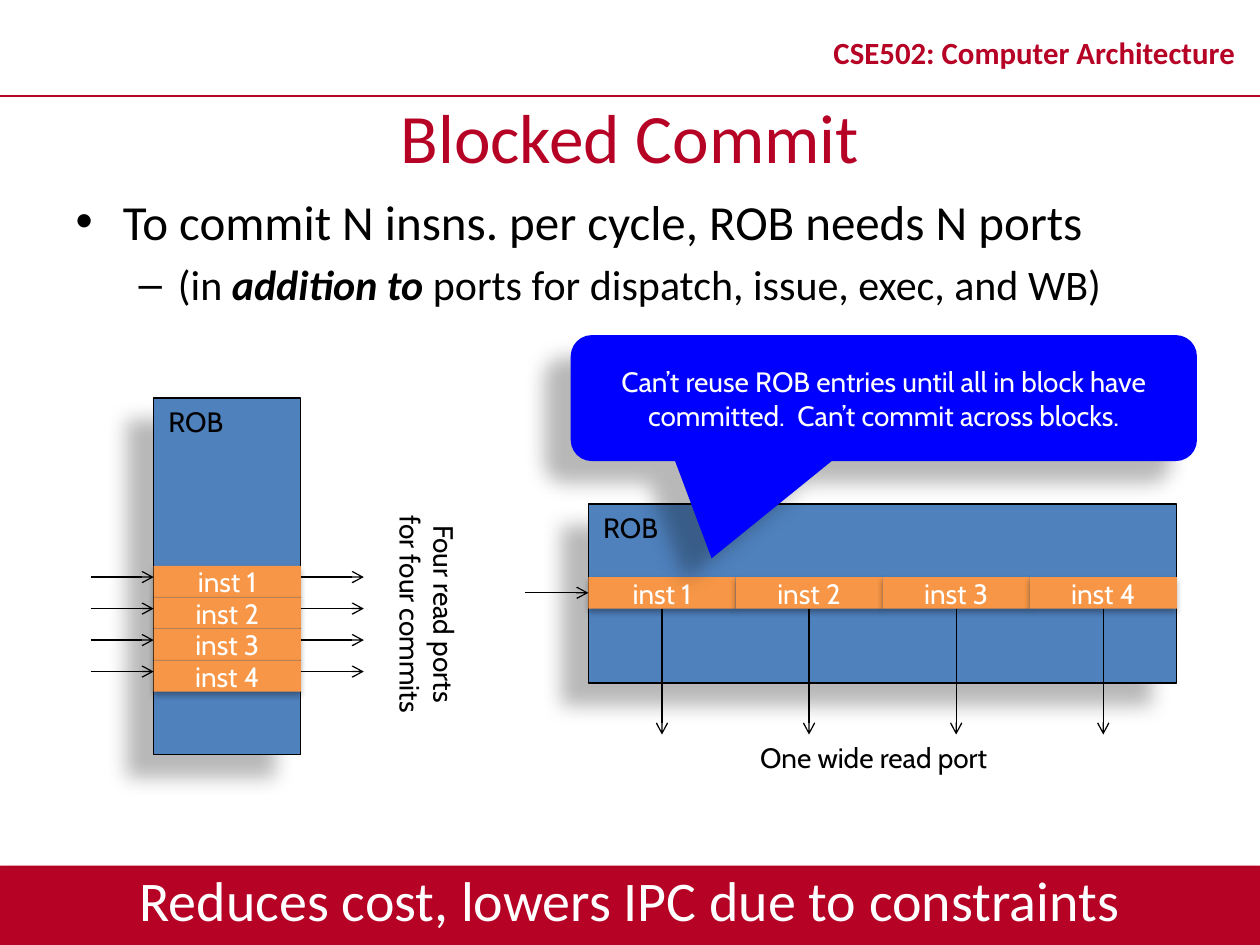
from lxml.etree import SubElement as Sub
from pptx import Presentation
from pptx.dml.color import RGBColor as RGB
from pptx.enum.shapes import MSO_CONNECTOR as Conn, MSO_SHAPE as Kind
from pptx.enum.text import MSO_ANCHOR as Anchor, MSO_AUTO_SIZE as Auto, PP_ALIGN as Align
from pptx.oxml.ns import qn
from pptx.util import Inches, Pt

RED, BLUE, STEEL = RGB(0xB6, 0x02, 0x25), RGB(0, 0, 0xFF), RGB(0x4F, 0x81, 0xBD)
ORANGE, BLACK, WHITE = RGB(0xF7, 0x96, 0x46), RGB(0, 0, 0), RGB(0xFF, 0xFF, 0xFF)

# Content
COURSE = "CSE502: Computer Architecture"
TITLE = "Blocked Commit"
POINTS = [  # level, size, runs of (text, strong)
    (0, 28, [("To commit N insns. per cycle, ROB needs N ports", False)]),
    (1, 24, [("(in ", False), ("addition to ", True),
             ("ports for dispatch, issue, exec, and WB)", False)]),
]
INSTS = ["inst 1", "inst 2", "inst 3", "inst 4"]
TALL = ["Four read ports", "for four commits"]
WIDE = "One wide read port"
NOTE = ("Can’t reuse ROB entries until all in block have committed."
        "  Can’t commit across blocks.")
CLOSE = "Reduces cost, lowers IPC due to constraints"

# Shadows: opacity %, blur, distance, angle
DEEP, SOFT, BASE = (28, 11.8, 19.7, 141), (32, 3.5, 2.2, 90), (35, 3.1, 1.8, 90)

# Grid, in inches
PAGE_W, PAGE_H, BAND = 10, 7.5, 0.63
RULE_Y = 0.76
CELL_W, CELL_H = 4.67 / 4, 0.25
ARROW = 0.5

deck = Presentation()
deck.slide_width, deck.slide_height = Inches(PAGE_W), Inches(PAGE_H)
slide = deck.slides.add_slide(deck.slide_layouts[1])
page = slide.shapes


def write(shape, text, size=16, font="Cabin", color=BLACK, bold=None,
          anchor=Anchor.TOP, wrap=True, gap=None):
    """Fill a shape with centred paragraphs, one for each line of text."""
    frame = shape.text_frame
    frame.word_wrap, frame.vertical_anchor = wrap, anchor
    frame.auto_size = Auto.NONE
    frame.text = text
    for para in frame.paragraphs:
        para.alignment, para.line_spacing = Align.CENTER, gap
        face = para.font
        face.size, face.name, face.bold = Pt(size), font, bold
        face.color.rgb = color


def place(shape, box):
    shape.left, shape.top, shape.width, shape.height = map(Inches, box)


def label(home, box, text, **form):
    item = home.add_textbox(*map(Inches, box))
    write(item, text, **form)
    return item


def block(home, box, fill, shade, edge=None, kind=Kind.RECTANGLE):
    """Draw a filled shape with an outer shadow."""
    item = home.add_shape(kind, *map(Inches, box))
    item.fill.solid()
    item.fill.fore_color.rgb = fill
    if edge is None:
        item.line.fill.background()
    else:
        item.line.color.rgb, item.line.width = edge, Pt(0.75)
    item.shadow.inherit = False
    alpha, blur, dist, angle = shade
    effects = item._element.spPr.find(qn("a:effectLst"))
    outer = Sub(effects, qn("a:outerShdw"), blurRad=str(Pt(blur)),
                dist=str(Pt(dist)), dir=str(angle * 60000), rotWithShape="0")
    ink = Sub(outer, qn("a:srgbClr"), val="000000")
    Sub(ink, qn("a:alpha"), val=str(alpha * 1000))
    return item


def line(home, x, y, dx=0, dy=0, color=BLACK, width=0.75, head=True):
    item = home.add_connector(Conn.STRAIGHT, *map(Inches, (x, y, x + dx, y + dy)))
    item.line.color.rgb, item.line.width = color, Pt(width)
    if head:
        Sub(item.line._get_or_add_ln(), qn("a:tailEnd"), type="arrow")
    Sub(item._element.spPr, qn("a:effectLst"))


def inst(home, x, y, text):
    item = block(home, (x, y, CELL_W, CELL_H), ORANGE, SOFT)
    write(item, text, color=WHITE, anchor=Anchor.MIDDLE, wrap=False)


# Header, title and footer band
block(page, (0, 6.87, PAGE_W, BAND), RED, BASE)
line(page, 0, RULE_Y, dx=PAGE_W, color=RED, width=1, head=False)
label(page, (6.42, 0.13, 3.58, BAND), COURSE, size=17.6, font="Calibri",
      color=RED, bold=True, anchor=Anchor.MIDDLE, gap=0.8)
place(page.title, (0, RULE_Y, PAGE_W, BAND))
write(page.title, TITLE, size=39.6, font="Calibri", color=RED, anchor=Anchor.MIDDLE)

# Bullets
body = slide.placeholders[1]
place(body, (0.5, 1.47, 9, 5.35))
frame = body.text_frame
frame.auto_size = Auto.NONE
for i, (level, size, runs) in enumerate(POINTS):
    para = frame.add_paragraph() if i else frame.paragraphs[0]
    para.level = level
    for text, strong in runs:
        run = para.add_run()
        run.text = text
        face = run.font
        face.size, face.name, face.color.rgb = Pt(size), "Calibri", BLACK
        face.bold = face.italic = strong

# Tall buffer: one port for each instruction
left, top, first = 1.22, 3.16, 4.49
block(page, (left, top, CELL_W, 2.83), STEEL, DEEP, BLACK)
for i, text in enumerate(INSTS):
    inst(page, left, first + i * CELL_H, text)
for x in (left + CELL_W, left - ARROW):
    for i in range(len(INSTS)):
        line(page, x, 4.58 + i * CELL_H, dx=ARROW)
ports = label(page, (2.97, 3.99, 0.74, 2), "\n".join(TALL))
ports.text_frame._txBody.bodyPr.set("vert", "eaVert")
label(page, (left, top, 0.67, 0.37), "ROB")

# Wide buffer: one port for the whole row
wide = page.add_group_shape().shapes
left, top, row = 4.67, 4, 4.58
block(wide, (left, top, 4 * CELL_W, 1.42), STEEL, DEEP, BLACK)
for i, text in enumerate(INSTS):
    inst(wide, left + i * CELL_W, row, text)
line(wide, left - ARROW, row + CELL_H / 2, dx=ARROW)
for i in range(len(INSTS)):
    line(wide, left + (i + 0.5) * CELL_W, row + CELL_H, dy=1)
label(wide, (5.92, 5.83, 2.03, 0.37), WIDE, wrap=False)
label(wide, (left, top, 0.67, 0.37), "ROB")

# Callout and closing line
call = block(page, (4.53, 2.66, 4.97, 1), BLUE, DEEP,
             kind=Kind.ROUNDED_RECTANGULAR_CALLOUT)
for i, value in enumerate((-0.275, 1.272, 0.167)):
    call.adjustments[i] = value
write(call, NOTE, color=WHITE, anchor=Anchor.MIDDLE)
label(page, (0, 6.82, PAGE_W, BAND), CLOSE, size=32, font="Calibri", color=WHITE)

deck.save("out.pptx")
